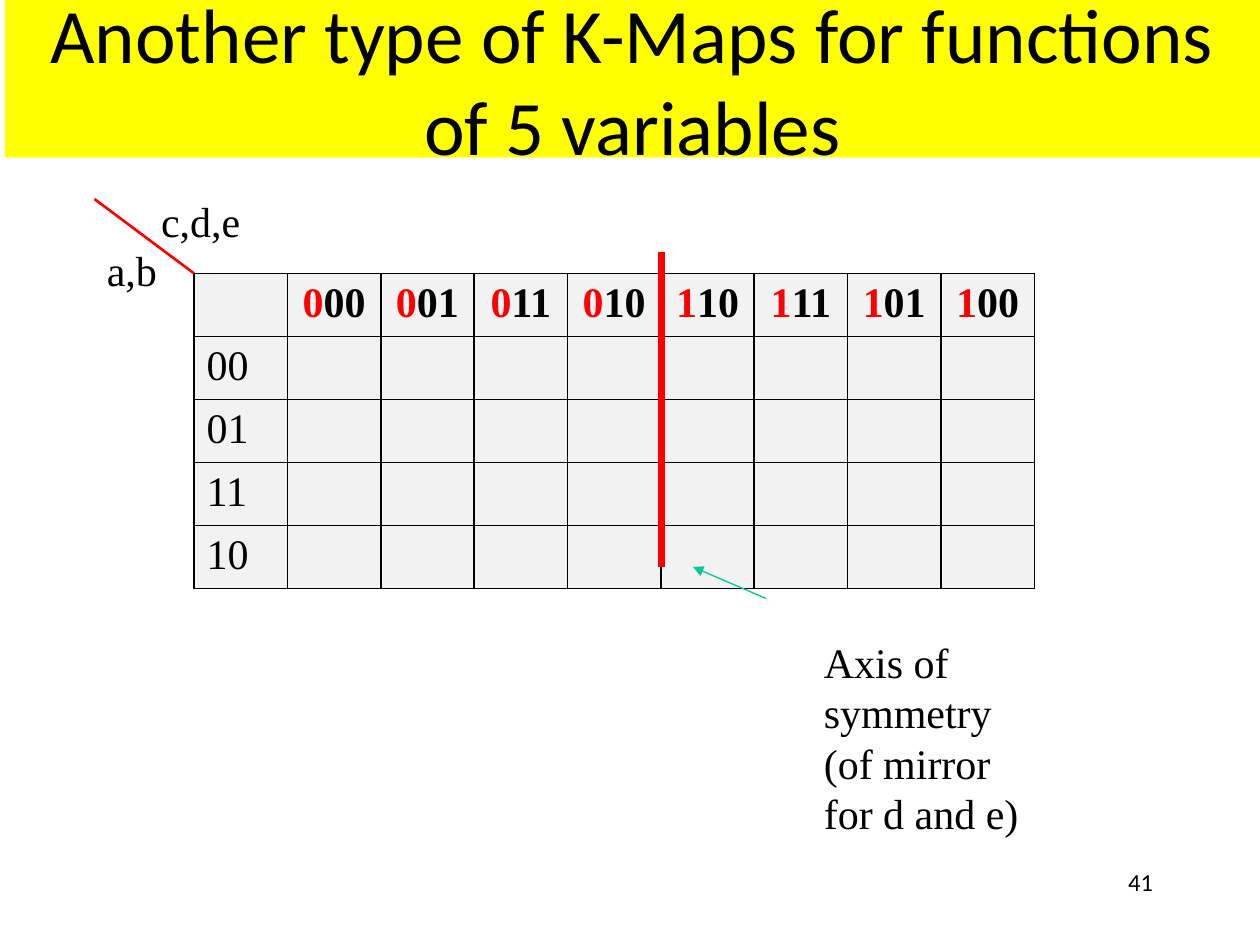
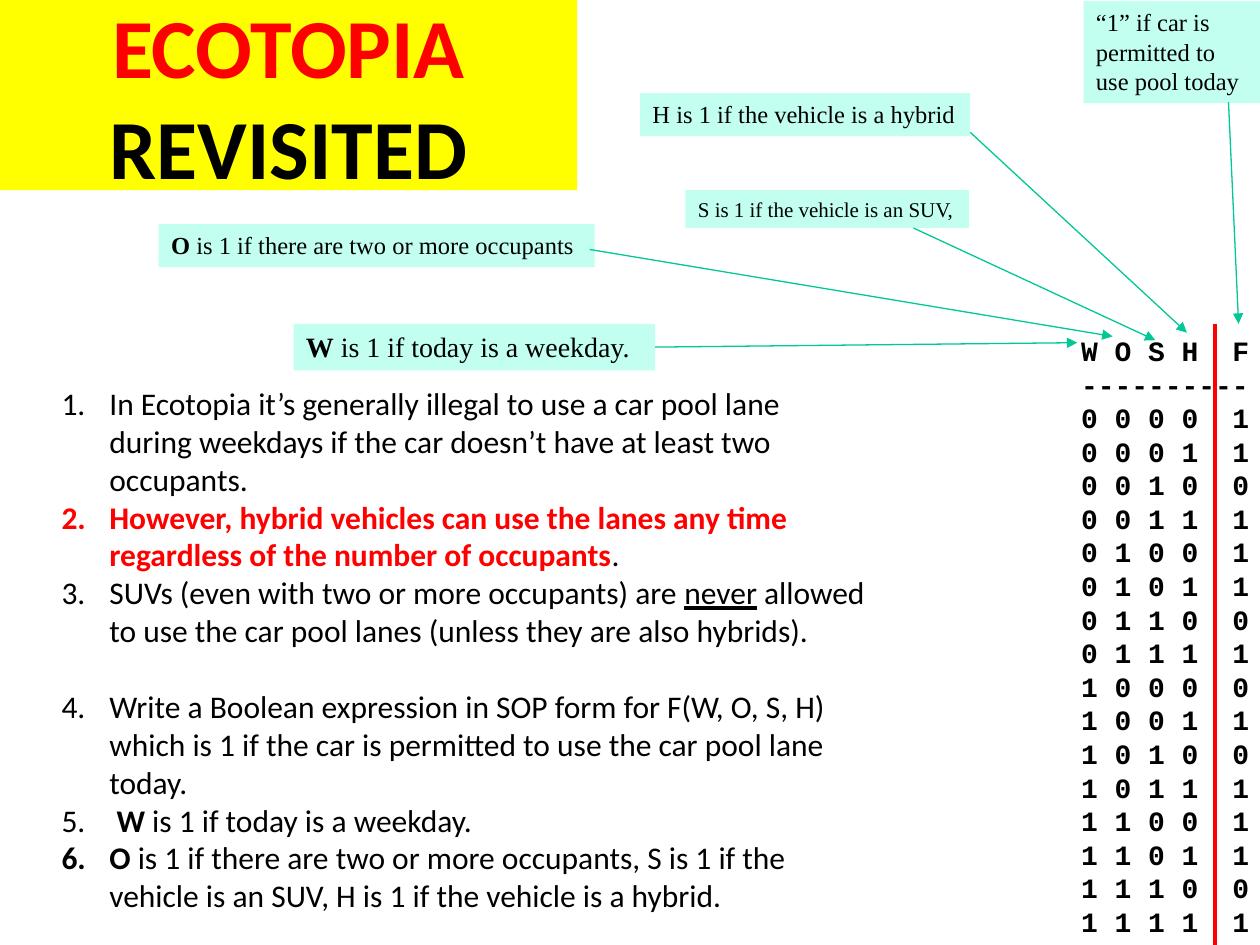
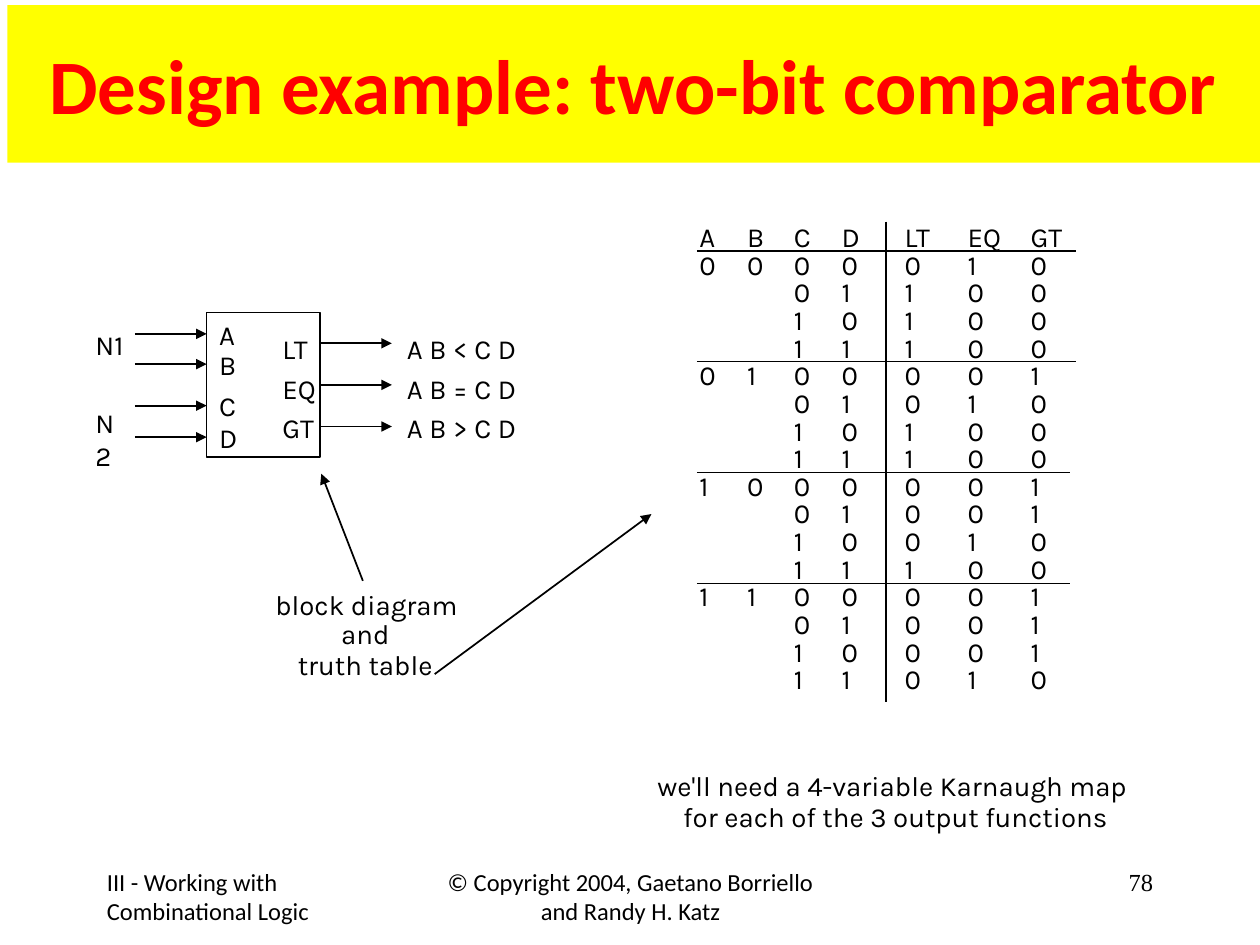
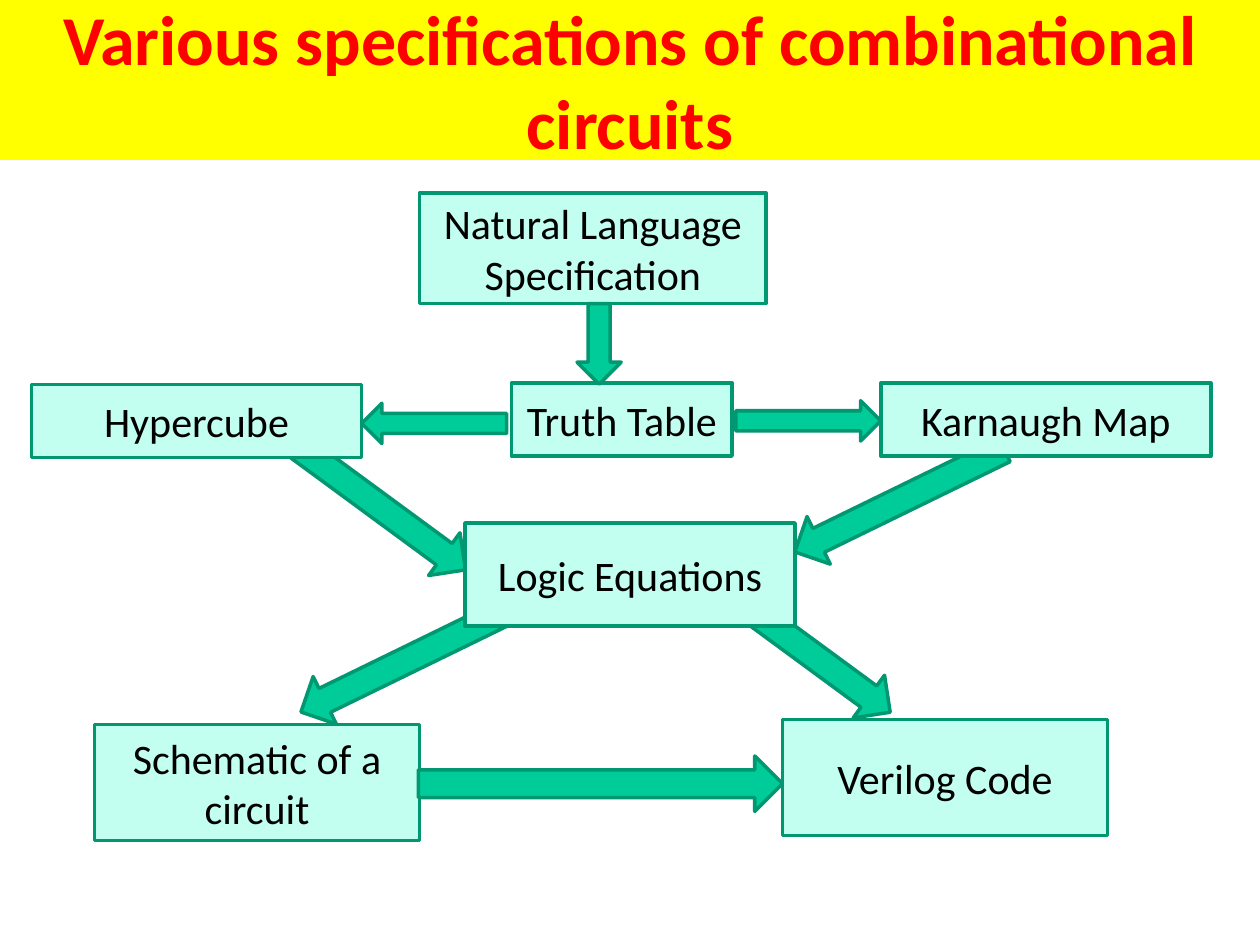
from itertools import product

from lxml import etree
from pptx import Presentation
from pptx.dml.color import RGBColor
from pptx.enum.shapes import MSO_CONNECTOR, MSO_SHAPE
from pptx.enum.text import MSO_ANCHOR, PP_ALIGN
from pptx.oxml.ns import qn
from pptx.util import Inches, Pt

BLACK = RGBColor(0x00, 0x00, 0x00)
RED = RGBColor(0xFF, 0x00, 0x00)
YELLOW = RGBColor(0xFF, 0xFF, 0x00)
PALE_GREY = RGBColor(0xF2, 0xF2, 0xF2)
MINT = RGBColor(0xC2, 0xFF, 0xF0)
TEAL = RGBColor(0x00, 0xC8, 0x96)
ARROW_GREEN = RGBColor(0x00, 0xCC, 0x99)
DARK_GREEN = RGBColor(0x00, 0x97, 0x71)

SANS, SERIF, MONO, KARLA = "Calibri", "Times New Roman", "Courier New", "Karla"
LEFT, CENTER, RIGHT = PP_ALIGN.LEFT, PP_ALIGN.CENTER, PP_ALIGN.RIGHT
TOP, MIDDLE = MSO_ANCHOR.TOP, MSO_ANCHOR.MIDDLE
STRAIGHT = MSO_CONNECTOR.STRAIGHT
RECT, DOWN, ACROSS = MSO_SHAPE.RECTANGLE, MSO_SHAPE.DOWN_ARROW, MSO_SHAPE.RIGHT_ARROW
RIGHT_SIDE = 3

BOLD = {"bold": True}
BOLD_RED = {"bold": True, "color": RED}
TIGHT = {"margin_left": Inches(0.02), "margin_right": Inches(0.02),
         "margin_top": Inches(0.03), "margin_bottom": Inches(0.03)}
NO_WRAP = {"word_wrap": False}


def font(name, size, **more):
    return {"name": name, "size": Pt(size), "color": BLACK, **more}


KARLA_FONT = font(KARLA, 15.8)
FOOTER_FONT = font(SANS, 14)
LABEL_FONT = font(SERIF, 24)
NODE_FONT = font(SANS, 24)


def set_values(obj, values):
    for key, value in values.items():
        if key == "color":
            obj.color.rgb = value
        else:
            setattr(obj, key, value)


def write_paragraph(p, runs, base, para=None):
    set_values(p, para or {})
    if isinstance(runs, str):
        runs = [(runs, {})]
    for content, extra in runs:
        for i, line in enumerate(content.split("\n")):
            if i:
                p.add_line_break()
            r = p.add_run()
            r.text = line
            set_values(r.font, {**base, **extra})


def write_frame(tf, paragraphs, base, para=None, frame=None):
    set_values(tf, {"word_wrap": True, **(frame or {})})
    for i, runs in enumerate(paragraphs):
        p = tf.add_paragraph() if i else tf.paragraphs[0]
        write_paragraph(p, runs, base, para)


def add_text(s, box, paragraphs, base, para=None, frame=None, fill=None):
    sp = s.shapes.add_textbox(*map(Inches, box))
    if fill is not None:
        sp.fill.solid()
        sp.fill.fore_color.rgb = fill
    write_frame(sp.text_frame, paragraphs, base, para, frame)
    return sp


def add_line(s, start, end, color=BLACK, width=1, arrow=False):
    c = s.shapes.add_connector(STRAIGHT, *map(Inches, (*start, *end)))
    c.line.color.rgb = color
    c.line.width = Pt(width)
    sp_pr = c.element.spPr
    if arrow:
        etree.SubElement(sp_pr.find(qn("a:ln")), qn("a:tailEnd"), type="triangle")
    etree.SubElement(sp_pr, qn("a:effectLst"))
    return c


def add_shape(s, kind, box, fill, line, width, rotation=0):
    sp = s.shapes.add_shape(kind, *map(Inches, box))
    sp.shadow.inherit = False
    sp.rotation = rotation
    if fill is None:
        sp.fill.background()
    else:
        sp.fill.solid()
        sp.fill.fore_color.rgb = fill
    sp.line.color.rgb = line
    sp.line.width = Pt(width)
    return sp


def set_tabs(p, stops):
    tabs = etree.SubElement(p._p.get_or_add_pPr(), qn("a:tabLst"))
    for stop in stops:
        etree.SubElement(tabs, qn("a:tab"), pos=str(Inches(stop)), algn="l")


def number(p, indent):
    p_pr = p._p.get_or_add_pPr()
    p_pr.set("marL", str(Inches(indent)))
    p_pr.set("indent", str(-Inches(indent)))
    etree.SubElement(p_pr, qn("a:buAutoNum"), type="arabicPeriod")


def add_title(s, box, runs, size, **more):
    add_text(s, box, [runs], font(SANS, size, **more), {"alignment": CENTER},
             {"vertical_anchor": MIDDLE}, YELLOW)


def add_footer(s, page, page_font, left=None, middle=None):
    parts = ((0.75, 2.08, left, LEFT, SANS), (3.42, 3.17, middle, CENTER, SANS),
             (7.17, 2.08, page, RIGHT, page_font))
    for x, w, content, align, name in parts:
        if content:
            add_text(s, (x, 6.83, w, 0.5), [content], {**FOOTER_FONT, "name": name},
                     {"alignment": align})


def border_cell(cell):
    tc_pr = cell._tc.get_or_add_tcPr()
    for i, side in enumerate(("lnL", "lnR", "lnT", "lnB")):
        ln = etree.Element(qn(f"a:{side}"), w=str(Pt(1)))
        fill = etree.SubElement(ln, qn("a:solidFill"))
        etree.SubElement(fill, qn("a:srgbClr"), val=str(BLACK))
        tc_pr.insert(i, ln)


def add_kmap(s, box):
    x, y, w, h = box
    columns = ["000", "001", "011", "010", "110", "111", "101", "100"]
    rows = ["00", "01", "11", "10"]
    table = s.shapes.add_table(len(rows) + 1, len(columns) + 1, *map(Inches, box)).table
    table.first_row = table.horz_banding = False
    for col in table.columns:
        col.width = Inches(w / (len(columns) + 1))
    for row in table.rows:
        row.height = Inches(h / (len(rows) + 1))
    for cell in table.iter_cells():
        cell.fill.solid()
        cell.fill.fore_color.rgb = PALE_GREY
        border_cell(cell)
    for i, code in enumerate(columns, 1):
        write_paragraph(table.cell(0, i).text_frame.paragraphs[0],
                        [(code[0], {"color": RED}), (code[1:], {})],
                        {**LABEL_FONT, **BOLD}, {"alignment": CENTER})
    for i, code in enumerate(rows, 1):
        write_paragraph(table.cell(i, 0).text_frame.paragraphs[0], code, LABEL_FONT)

    add_text(s, (x - 0.79, y - 0.28, 0.67, 0.5), ["a,b"], LABEL_FONT)
    add_line(s, (x - 0.79, y - 0.59), (x, y), RED, 1.5)
    add_text(s, (x - 0.36, y - 0.67, 1.17, 0.5), ["c,d,e"], LABEL_FONT)
    add_line(s, (x + 3.71, y - 0.17), (x + 3.71, y + 2.33), RED, 4.5)
    add_line(s, (x + 4.54, y + 2.58), (x + 3.96, y + 2.33), TEAL, 0.75, True)
    add_text(s, (x + 4.9, y + 2.83, 1.9, 1.72),
             ["Axis of symmetry (of mirror for d and e)"], LABEL_FONT)


def add_rules(s, box):
    rules = [
        "In Ecotopia it’s generally illegal to use a car pool lane during weekdays "
        "if the car doesn’t have at least two occupants.",
        [("However, hybrid vehicles can use the lanes any time regardless of the "
          "number of occupants", BOLD_RED), (".", {})],
        [("SUVs (even with two or more occupants) are ", {}),
         ("never", {"underline": True}),
         (" allowed to use the car pool lanes (unless they are also hybrids).", {})],
        "Write a Boolean expression in SOP form for F(W, O, S, H) which is 1 if the "
        "car is permitted to use the car pool lane today.",
        [(" ", {}), ("W", BOLD), (" is 1 if today is a weekday.", {})],
        [("O", BOLD), (" is 1 if there are two or more occupants, S is 1 if the "
                       "vehicle is an SUV, H is 1 if the vehicle is a hybrid.", {})],
    ]
    paragraphs = add_text(s, box, rules, font(SANS, 18)).text_frame.paragraphs
    paragraphs[2].space_after = Pt(22)
    for p in paragraphs:
        number(p, 0.38)


def add_pool_table(s, box):
    x, y, w, h = box
    rows = ["W O S H\tF", "-" * 10]
    for weekday, occupants, suv, hybrid in product((0, 1), repeat=4):
        permitted = hybrid or (not suv and (occupants or not weekday))
        rows.append(f"{weekday} {occupants} {suv} {hybrid}\t{int(permitted)}")
    sp = add_text(s, box, rows, font(MONO, 16, bold=True), None,
                  {"vertical_anchor": MIDDLE, "margin_left": Inches(0.23)})
    for p in sp.text_frame.paragraphs:
        set_tabs(p, [1.2])
    add_line(s, (x + 1.29, y), (x + 1.29, y + h), RED, 2.25)


def add_callouts(s):
    callouts = [
        ((8.6, 0.01, 1.4, 0.81), 14, "“1” if car is permitted to use pool today",
         True, (9.75, 0.81), (9.83, 2.57)),
        ((2.33, 2.57, 2.87, 0.37), 16, [("W", BOLD), (" is 1 if today is a weekday.", {})],
         False, None, (8.55, 2.72)),
        ((1.26, 1.78, 3.46, 0.34), 14,
         [("O", BOLD), (" is 1 if there are two or more occupants", {})],
         True, (4.68, 1.98), (8.83, 2.67)),
        ((5.44, 1.51, 2.25, 0.3), 12, "S is 1 if the vehicle is an SUV,",
         False, (7.25, 1.81), (9.17, 2.7)),
        ((5.08, 0.74, 2.62, 0.34), 14, "H is 1 if the vehicle is a hybrid",
         False, (7.7, 1.05), (9.42, 2.64)),
    ]
    for box, size, runs, wrap, start, end in callouts:
        sp = add_text(s, box, [runs], font(SERIF, size), None, {"word_wrap": wrap}, MINT)
        c = add_line(s, start or box[:2], end, TEAL, 0.75, True)
        if start is None:
            c.begin_connect(sp, RIGHT_SIDE)


def add_comparator_block(s, box):
    x, y, w, h = box
    frame = {**NO_WRAP, **TIGHT}
    for dx, width, content in ((0.58, 0.38, "LT\nEQ\nGT"),
                               (1.57, 1.58, "A B < C D\nA B = C D\nA B > C D")):
        add_text(s, (x + dx, y + 0.07, width, 0.75), [content], KARLA_FONT,
                 {"line_spacing": 1.2}, frame)
    block = add_shape(s, RECT, box, None, BLACK, 1)
    for name, dy in (("A", 0.17), ("B", 0.41), ("C", 0.74), ("D", 0.99)):
        add_line(s, (x - 0.57, y + dy), (x, y + dy), arrow=True)
        add_text(s, (x, y + dy - 0.18, 0.34, 0.37), [name], KARLA_FONT, None, NO_WRAP)
    for i in range(3):
        dy = h / 2 + 0.33 * (i - 1)
        c = add_line(s, (x + w, y + dy), (x + w + 0.57, y + dy), arrow=True)
        if i == 1:
            c.begin_connect(block, RIGHT_SIDE)
    for name, dy in (("N1", 0.07), ("N2", 0.69)):
        add_text(s, (x - 0.98, y + dy, 0.47, 0.37), [name], KARLA_FONT, None, NO_WRAP)


def add_comparator_table(s, box):
    x, y, w, h = box
    for i, length in enumerate((3.01, 3.01, 2.96, 2.96)):
        rule_y = y + 0.23 + 0.88 * i
        add_line(s, (x, rule_y), (x + length, rule_y))
    add_line(s, (x + 1.5, y), (x + 1.5, y + 3.81))
    rows = ["A\tB\tC\tD\tLT\tEQ\tGT"]
    for a, b, c, d in product((0, 1), repeat=4):
        left, right = (a, b), (c, d)
        head = ("", "") if c or d else left
        results = (int(left < right), int(left == right), int(left > right))
        rows.append("\t".join(map(str, (*head, c, d, *results))))
    sp = add_text(s, box, rows, KARLA_FONT, {"line_spacing": Pt(15.8)},
                  {**NO_WRAP, **TIGHT})
    for p in sp.text_frame.paragraphs:
        set_tabs(p, [0.38, 0.75, 1.13, 1.63, 2.13, 2.63])


def add_comparator_notes(s):
    notes = [((4.85, 6.09, 4.52, 0.63), ["we'll need a 4-variable Karnaugh map \n"
                                         "for each of the 3 output functions"]),
             ((1.96, 4.65, 1.9, 0.4), ["block diagram"]),
             ((1.95, 4.88, 1.9, 0.63), ["and", "truth table"])]
    for box, paragraphs in notes:
        add_text(s, box, paragraphs, KARLA_FONT,
                 {"alignment": CENTER, "line_spacing": Pt(17.8)}, {**NO_WRAP, **TIGHT})
    add_line(s, (2.88, 4.61), (2.55, 3.76), arrow=True)
    add_line(s, (3.45, 5.35), (5.17, 4.08), arrow=True)


def add_nodes(s, nodes):
    for name, box in nodes:
        sp = add_shape(s, RECT, box, MINT, DARK_GREEN, 2)
        write_frame(sp.text_frame, [name], NODE_FONT, {"alignment": CENTER},
                    {"vertical_anchor": MIDDLE})


def add_block_arrows(s, arrows):
    for kind, box, rotation in arrows:
        add_shape(s, kind, box, ARROW_GREEN, DARK_GREEN, 2, rotation)


def kmap_slide(s):
    add_title(s, (0.04, 0, 9.96, 1.25),
              "Another type of K-Maps for functions of 5 variables", 44)
    add_footer(s, "41", SANS)
    add_kmap(s, (1.54, 2.17, 6.67, 2.03))


def ecotopia_slide(s):
    add_title(s, (0, 0, 4.58, 1.51), [("ECOTOPIA ", {"color": RED}), ("REVISITED", {})],
              48, bold=True)
    add_rules(s, (0.39, 3, 6.6, 4.34))
    add_pool_table(s, (8.35, 2.57, 2.58, 4.95))
    add_callouts(s)


def comparator_slide(s):
    add_footer(s, "78", SERIF, "III - Working with Combinational Logic",
               "© Copyright 2004, Gaetano Borriello and Randy H. Katz")
    add_title(s, (0.06, 0.04, 9.94, 1.25), "Design example: two-bit comparator", 44,
              **BOLD_RED)
    add_comparator_block(s, (1.64, 2.48, 0.9, 1.15))
    add_comparator_table(s, (5.53, 1.76, 3.34, 4.08))
    add_comparator_notes(s)


def specifications_slide(s):
    add_title(s, (0, 0, 10, 1.27), "Various specifications of combinational circuits",
              40, **BOLD_RED)
    add_nodes(s, [("Schematic of a circuit", (0.75, 5.75, 2.58, 0.92)),
                  ("Verilog Code", (6.21, 5.71, 2.58, 0.92))])
    add_block_arrows(s, [(DOWN, (6.93, 3.05, 0.42, 1.85), 64),
                         (DOWN, (2.74, 3.05, 0.42, 1.85), 306.3),
                         (DOWN, (3.01, 4.32, 0.42, 1.85), 64),
                         (DOWN, (6.11, 4.18, 0.42, 1.85), 306.3)])
    add_nodes(s, [("Truth Table", (4.06, 3.04, 1.75, 0.58)),
                  ("Karnaugh Map", (6.99, 3.04, 2.62, 0.58)),
                  ("Natural Language Specification", (3.33, 1.53, 2.75, 0.88)),
                  ("Hypercube", (0.25, 3.05, 2.62, 0.58)),
                  ("Logic Equations", (3.69, 4.15, 2.62, 0.82))])
    add_block_arrows(s, [(DOWN, (4.58, 2.41, 0.35, 0.64), 0),
                         (ACROSS, (5.84, 3.18, 1.15, 0.32), 0),
                         (ACROSS, (2.87, 3.2, 1.15, 0.32), 180),
                         (ACROSS, (3.32, 6, 2.89, 0.44), 0)])


def main():
    prs = Presentation()
    prs.slide_width, prs.slide_height = Inches(10), Inches(7.5)
    blank = prs.slide_layouts[6]
    for build in (kmap_slide, ecotopia_slide, comparator_slide, specifications_slide):
        build(prs.slides.add_slide(blank))
    prs.save("out.pptx")


if __name__ == "__main__":
    main()
